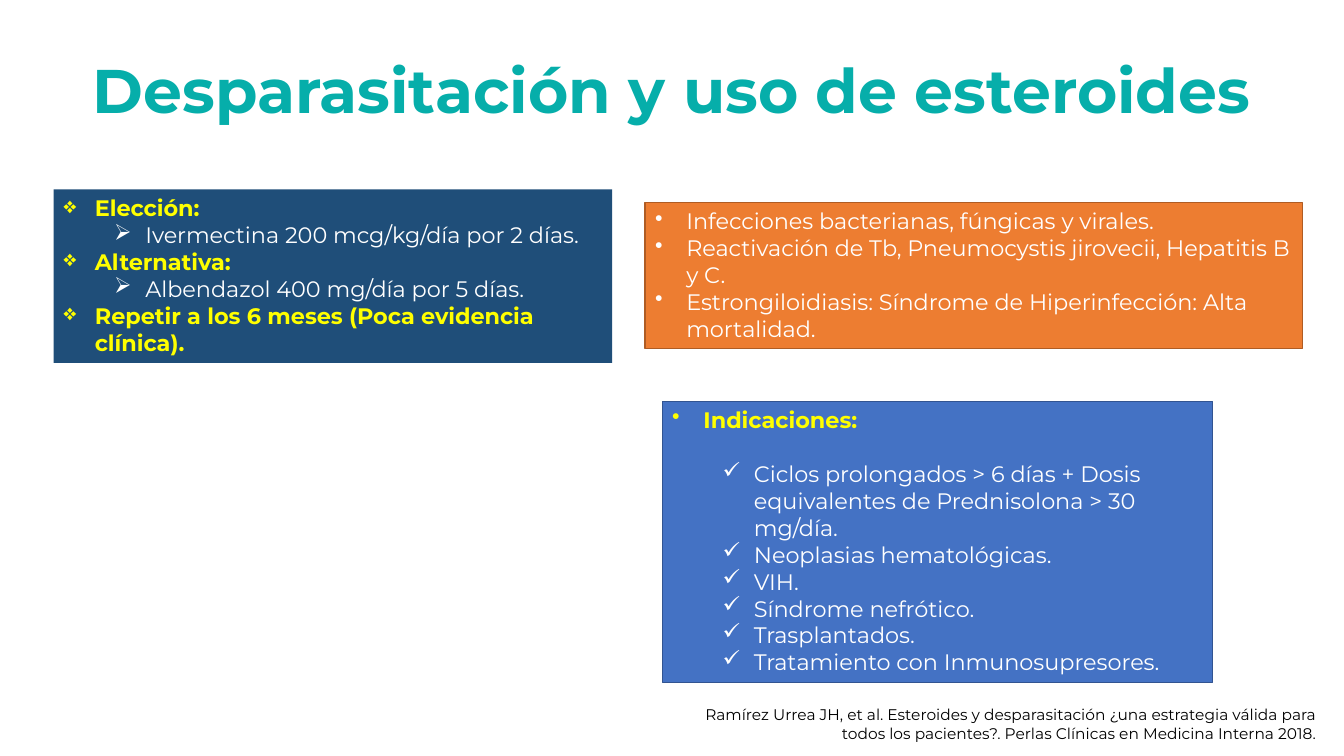
from dataclasses import dataclass
from typing import Any, Optional

import lxml.etree
import pptx
import pptx.dml.color
import pptx.enum.shapes
import pptx.enum.text
import pptx.oxml.ns
import pptx.util

INK = {
    "teal": "06AEAA", "white": "FFFFFF", "yellow": "FFFF00", "black": "000000",
    "navy": "1F4E79", "blue": "4472C4", "orange": "ED7D31",
    "rust": "AF5C24", "dusk": "325491",
}
ALIGN = pptx.enum.text.PP_ALIGN
ANCHOR = pptx.enum.text.MSO_ANCHOR
WIDE, HIGH = pptx.util.Inches(13.33), pptx.util.Inches(7.5)
HANG = 0.31  # hanging indent of bullets, inches
STEP = 0.5  # extra indent per level, inches


@dataclass
class Area:
    """Percent of the slide's width and height."""
    left: float
    top: float
    width: float
    height: float


@dataclass
class Item:
    text: str
    mark: str
    level: int = 0
    bold: bool = False
    gap: float = 0


@dataclass
class Panel:
    area: Area
    fill: str
    edge: Optional[str]
    items: list[Item]


def head(text: str, mark: str) -> Item:
    return Item(text, mark, bold=True)


def sub(text: str, mark: str, gap: float = 0) -> Item:
    return Item(text, mark, level=1, gap=gap)


PANELS = [
    Panel(Area(48, 26.8, 48.9, 19.33), "orange", "rust", [
        Item("Infecciones bacterianas, fúngicas y virales.", "•"),
        Item("Reactivación de Tb, Pneumocystis jirovecii, Hepatitis B y C.", "•"),
        Item("Estrongiloidiasis: Síndrome de Hiperinfección: Alta mortalidad.", "•"),
    ]),
    Panel(Area(4, 25.07, 41.55, 22.93), "navy", None, [
        head("Elección:", "❖"),
        sub("Ivermectina 200 mcg/kg/día por 2 días.", "➢"),
        head("Alternativa:", "❖"),
        sub("Albendazol 400 mg/día por 5 días.", "➢"),
        head("Repetir a los 6 meses (Poca evidencia clínica).", "❖"),
    ]),
    Panel(Area(49.28, 53.07, 40.95, 37.2), "blue", "dusk", [
        head("Indicaciones:", "•"),
        sub("Ciclos prolongados > 6 días + Dosis equivalentes de "
            "Prednisolona > 30 mg/día.", "✓", gap=19.5),
        sub("Neoplasias hematológicas.", "✓"),
        sub("VIH.", "✓"),
        sub("Síndrome nefrótico.", "✓"),
        sub("Trasplantados.", "✓"),
        sub("Tratamiento con Inmunosupresores.", "✓"),
    ]),
]


def tint(name: str) -> pptx.dml.color.RGBColor:
    return pptx.dml.color.RGBColor.from_string(INK[name])


def apply(target: Any, values: dict[str, Any]) -> None:
    for key, value in values.items():
        setattr(target, key, value)


def span(area: Area) -> dict[str, int]:
    return {
        "left": round(WIDE * area.left / 100),
        "top": round(HIGH * area.top / 100),
        "width": round(WIDE * area.width / 100),
        "height": round(HIGH * area.height / 100),
    }


def frame(shape: Any, anchor: Any) -> Any:
    apply(shape.text_frame, {
        "word_wrap": True,
        "auto_size": pptx.enum.text.MSO_AUTO_SIZE.NONE,
        "vertical_anchor": anchor,
    })
    return shape.text_frame


def write(para: Any, text: str, size: float, color: str, bold: bool = False) -> None:
    run = para.add_run()
    run.text = text
    apply(run.font, {"name": "Montserrat", "size": pptx.util.Pt(size), "bold": bold})
    run.font.color.rgb = tint(color)


def bullet(para: Any, item: Item) -> None:
    props = para._p.get_or_add_pPr()
    props.set("marL", str(pptx.util.Inches(HANG + STEP * item.level)))
    props.set("indent", str(-pptx.util.Inches(HANG)))
    mark = lxml.etree.SubElement(props, pptx.oxml.ns.qn("a:buChar"))
    mark.set("char", item.mark)


def draw(slide: Any, panel: Panel) -> None:
    box = slide.shapes.add_shape(
        pptx.enum.shapes.MSO_SHAPE.RECTANGLE, **span(panel.area))
    box.shadow.inherit = False
    box.fill.solid()
    box.fill.fore_color.rgb = tint(panel.fill)
    if panel.edge:
        box.line.color.rgb = tint(panel.edge)
        box.line.width = pptx.util.Pt(1)
    else:
        box.line.fill.background()
    body = frame(box, ANCHOR.TOP)
    for rank, item in enumerate(panel.items):
        para = body.add_paragraph() if rank else body.paragraphs[0]
        bullet(para, item)
        apply(para, {"alignment": ALIGN.LEFT, "level": item.level})
        if item.gap:
            para.space_before = pptx.util.Pt(item.gap)
        write(para, item.text, 16, "yellow" if item.bold else "white", item.bold)


def main() -> None:
    deck = pptx.Presentation()
    apply(deck, {"slide_width": WIDE, "slide_height": HIGH})
    slide = deck.slides.add_slide(deck.slide_layouts[5])

    # Title
    title = slide.shapes.title
    apply(title, span(Area(0, 4, 100, 16.67)))
    para = frame(title, ANCHOR.MIDDLE).paragraphs[0]
    apply(para, {"alignment": ALIGN.CENTER, "line_spacing": 0.9})
    write(para, "Desparasitación y uso de esteroides", 44, "teal", True)

    # Panels
    for panel in PANELS:
        draw(slide, panel)

    # Citation
    cite = slide.shapes.add_textbox(**span(Area(50, 92.67, 48.7, 6.27)))
    para = frame(cite, ANCHOR.TOP).paragraphs[0]
    para.alignment = ALIGN.RIGHT
    write(para, "Ramírez Urrea JH, et al. Esteroides y desparasitación ¿una "
          "estrategia válida para todos los pacientes?. Perlas Clínicas en "
          "Medicina Interna 2018.", 11, "black")

    deck.save("out.pptx")


if __name__ == "__main__":
    main()
